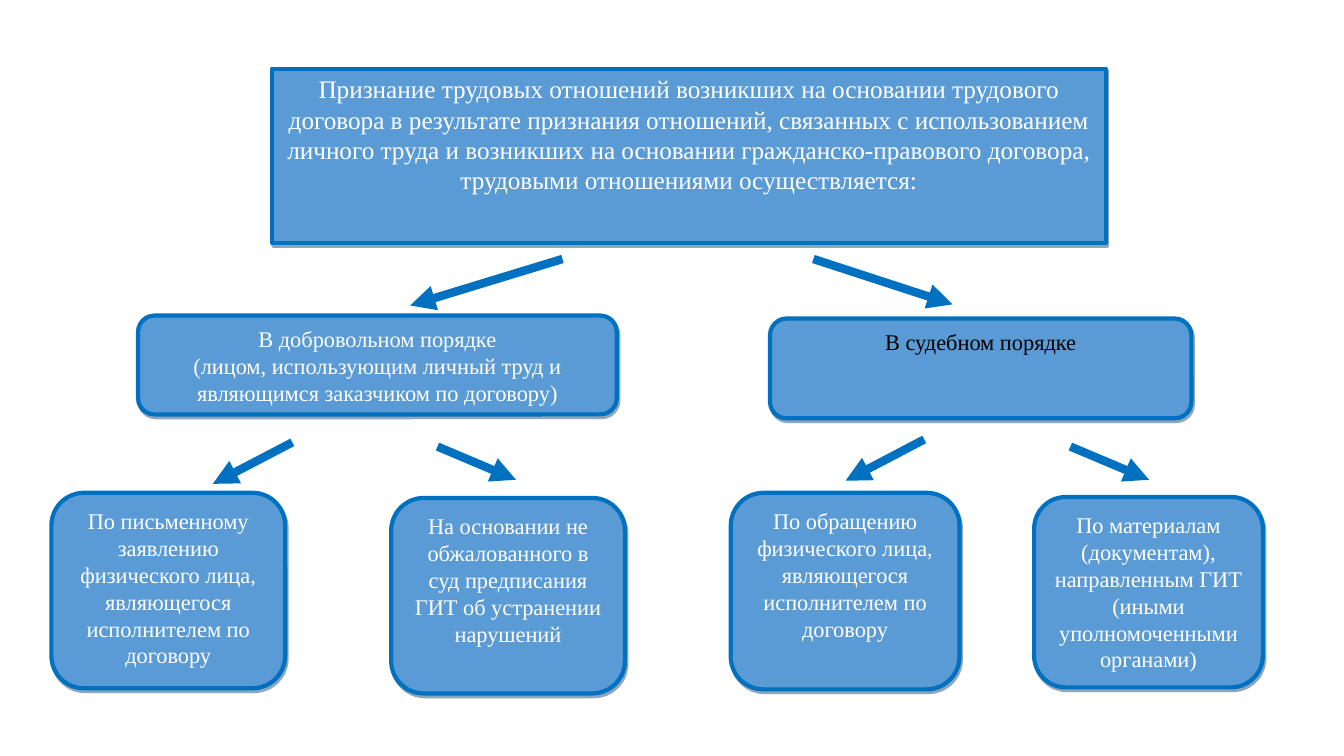
from lxml import etree
from pptx import Presentation
from pptx.dml.color import RGBColor
from pptx.enum.shapes import MSO_CONNECTOR, MSO_SHAPE
from pptx.enum.text import MSO_ANCHOR, MSO_AUTO_SIZE, PP_ALIGN
from pptx.oxml.ns import qn
from pptx.util import Pt

ROUNDED = MSO_SHAPE.ROUNDED_RECTANGLE
STRAIGHT = MSO_CONNECTOR.STRAIGHT
TOP = MSO_ANCHOR.TOP
CENTER = PP_ALIGN.CENTER
NO_AUTOFIT = MSO_AUTO_SIZE.NONE
TITLE_ONLY = 5
EMU_PER_POINT = 12700

TITLE = ("Признание трудовых отношений возникших на основании трудового договора "
         "в результате признания отношений, связанных с использованием личного "
         "труда и возникших на основании гражданско-правового договора, "
         "трудовыми отношениями осуществляется:")
TITLE_BOX = (194.4, 49, 595.4, 124.6)

# Text, (left, top, width, height), text colour
ORDERS = [
    ("В добровольном порядке\n(лицом, использующим личный труд и "
     "являющимся заказчиком по договору)", (98.6, 225.4, 342, 70.6), "FFFFFF"),
    ("В судебном порядке", (550, 227.5, 301, 71.3), "000000"),
]
GROUNDS = [
    ("По письменному заявлению физического лица, являющегося исполнителем "
     "по договору", (36.7, 352, 167, 139.7), "FFFFFF"),
    ("На основании не обжалованного в суд предписания ГИТ об устранении "
     "нарушений", (279.4, 355.7, 167, 139.7), "FFFFFF"),
    ("По обращению физического лица, являющегося исполнителем по договору",
     (522, 352, 163.4, 140.4), "FFFFFF"),
    ("По материалам (документам), направленным ГИТ (иными уполномоченными "
     "органами)", (738.7, 355, 163.4, 136), "FFFFFF"),
]

# Start x, start y, end x, end y
ARROWS = [
    (401.8, 185, 293, 218.2),
    (581, 185, 680.4, 217.4),
    (208.8, 316, 152, 345.6),
    (312.5, 319, 368.6, 342.7),
    (660.2, 313.9, 604, 343.4),
    (764.6, 319, 820.8, 342.7),
]


def color(hex_string):
    return RGBColor.from_string(hex_string)


def add_xml(parent, tag, **attributes):
    return etree.SubElement(parent, qn(tag), attributes)


def write_text(shape, text, *, font, size, text_color):
    frame = shape.text_frame
    frame.text = text
    frame.word_wrap = True
    frame.auto_size = NO_AUTOFIT
    frame.vertical_anchor = TOP
    for paragraph in frame.paragraphs:
        paragraph.alignment = CENTER
        paragraph.font.name = font
        paragraph.font.size = Pt(size)
        paragraph.font.color.rgb = color(text_color)


class Scheme:
    font = "Times New Roman"
    fill = "5B9BD5"
    line = "0070C0"
    shadow = "1F4D78"

    def __init__(self, slide):
        self.slide = slide

    def style_box(self, shape):
        """Apply the common fill, outline and hard offset shadow."""
        shape.fill.solid()
        shape.fill.fore_color.rgb = color(self.fill)
        shape.line.color.rgb = color(self.line)
        shape.line.width = Pt(3)
        shape.shadow.inherit = False
        effects = shape._element.spPr.find(qn("a:effectLst"))
        outer = add_xml(effects, "a:outerShdw", dist=str(int(2.2 * EMU_PER_POINT)),
                        dir=str(63 * 60000), algn="ctr", rotWithShape="0")
        tone = add_xml(outer, "a:srgbClr", val=self.shadow)
        add_xml(tone, "a:alpha", val="50000")

    def title(self, text, box):
        """Turn the title placeholder into the rounded top box."""
        shape = self.slide.shapes.title
        shape.left, shape.top, shape.width, shape.height = map(Pt, box)
        geometry = add_xml(shape._element.spPr, "a:prstGeom", prst="roundRect")
        add_xml(geometry, "a:avLst")
        self.style_box(shape)
        write_text(shape, text, font=self.font, size=18, text_color="FFFFFF")

    def box(self, text, box, text_color):
        shape = self.slide.shapes.add_shape(ROUNDED, *map(Pt, box))
        self.style_box(shape)
        write_text(shape, text, font=self.font, size=16, text_color=text_color)

    def arrow(self, *ends):
        connector = self.slide.shapes.add_connector(STRAIGHT, *map(Pt, ends))
        connector.line.color.rgb = color(self.line)
        connector.line.width = Pt(6)
        add_xml(connector.line._get_or_add_ln(), "a:tailEnd", type="triangle")
        add_xml(connector._element.spPr, "a:effectLst")


def main():
    presentation = Presentation()
    presentation.slide_width = Pt(960)
    presentation.slide_height = Pt(540)
    slide = presentation.slides.add_slide(presentation.slide_layouts[TITLE_ONLY])

    scheme = Scheme(slide)
    scheme.title(TITLE, TITLE_BOX)
    for text, box, text_color in ORDERS + GROUNDS:
        scheme.box(text, box, text_color)
    for ends in ARROWS:
        scheme.arrow(*ends)

    presentation.save("out.pptx")


if __name__ == "__main__":
    main()
